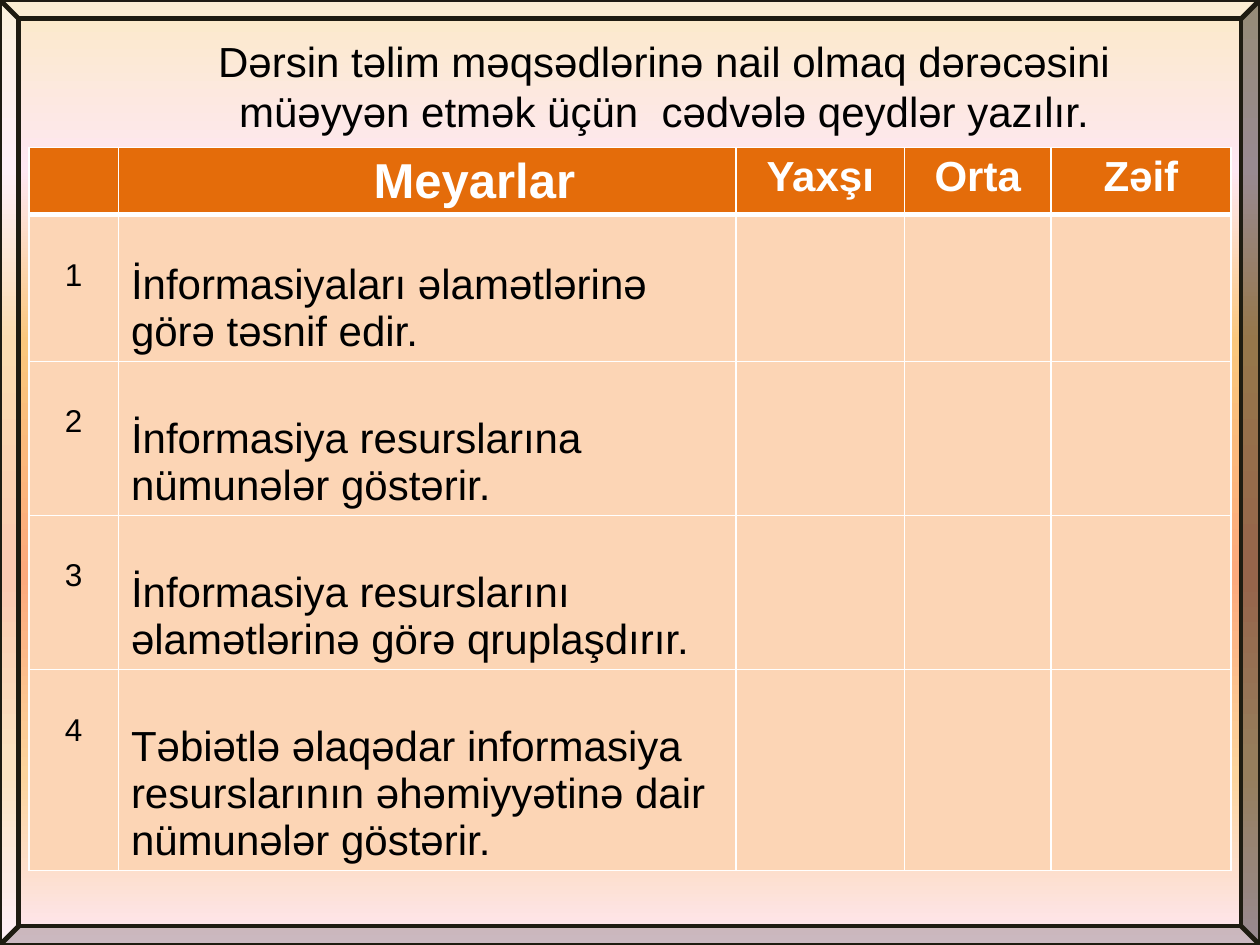
from lxml.etree import SubElement
from pptx import Presentation
from pptx.dml.color import RGBColor
from pptx.enum.shapes import MSO_SHAPE
from pptx.enum.text import PP_ALIGN
from pptx.oxml.ns import qn
from pptx.util import Inches, Pt

BLACK = RGBColor(0x00, 0x00, 0x00)
WHITE = RGBColor(0xFF, 0xFF, 0xFF)
DARK = RGBColor(0x1E, 0x1C, 0x11)
ORANGE = RGBColor(0xE4, 0x6C, 0x0A)
PEACH = RGBColor(0xFC, 0xD5, 0xB5)
CREAM = RGBColor(0xFB, 0xEA, 0xC7)
PINK = RGBColor(0xFE, 0xE7, 0xF2)
AMBER = RGBColor(0xFA, 0xC7, 0x7D)
CORAL = RGBColor(0xFB, 0xA9, 0x7D)
SAND = RGBColor(0xFB, 0xD4, 0x9C)
STOPS = [(0, CREAM), (18, PINK), (36, AMBER), (61, CORAL), (82, SAND), (100, PINK)]

FONT = "Arial"
TITLE = ("Dərsin təlim məqsədlərinə nail olmaq dərəcəsini "
         "müəyyən etmək üçün  cədvələ qeydlər yazılır.")
HEADS = ["", "Meyarlar", "Yaxşı", "Orta", "Zəif"]
GOALS = [
    "İnformasiyaları əlamətlərinə görə təsnif edir.",
    "İnformasiya resurslarına nümunələr göstərir.",
    "İnformasiya resurslarını əlamətlərinə görə qruplaşdırır.",
    "Təbiətlə əlaqədar informasiya resurslarının əhəmiyyətinə dair nümunələr göstərir.",
]
COLS = [0.71, 4.9, 1.34, 1.16, 1.43]
ROWS = [0.53, 1.15, 1.22, 1.21, 1.59]


def shade(fill, root):
    """Fill with the vertical gradient of STOPS."""
    fill.gradient()
    fill.gradient_angle = 270
    stops = next(root.iter(qn("a:gsLst")))
    for old in list(stops):
        stops.remove(old)
    for place, color in STOPS:
        stop = SubElement(stops, qn("a:gs"), pos=str(place * 1000))
        SubElement(stop, qn("a:srgbClr"), val=str(color))


def write(frame, text, size, color=BLACK, bold=False, align=PP_ALIGN.LEFT):
    para = frame.paragraphs[0]
    para.text = text
    para.alignment = align
    font = para.font
    font.name, font.size, font.bold = FONT, Pt(size), bold
    font.color.rgb = color


def edge(cell, base):
    """Draw white cell borders, with the given width below."""
    props = cell._tc.get_or_add_tcPr()
    for spot, (side, width) in enumerate([("L", 1), ("R", 1), ("T", 1), ("B", base)]):
        line = SubElement(props, qn(f"a:ln{side}"), w=str(Pt(width)))
        solid = SubElement(line, qn("a:solidFill"))
        SubElement(solid, qn("a:srgbClr"), val=str(WHITE))
        props.insert(spot, line)


def add_frame(slide):
    bevel = slide.shapes.add_shape(MSO_SHAPE.BEVEL, 0, 0, Inches(10), Inches(7.5))
    bevel.adjustments[0] = 0.02
    bevel.shadow.inherit = False
    shade(bevel.fill, bevel._element)
    bevel.line.color.rgb = DARK
    bevel.line.width = Pt(2.75)


def add_title(slide):
    box = slide.shapes.add_textbox(Inches(1.09), Inches(0.23), Inches(8.36), Inches(0.91))
    box.text_frame.word_wrap = True
    write(box.text_frame, TITLE, 24, align=PP_ALIGN.CENTER)


def add_grid(slide):
    grid = slide.shapes.add_table(
        len(ROWS), len(COLS), Inches(0.23), Inches(1.17),
        Inches(sum(COLS)), Inches(sum(ROWS))).table
    for col, width in zip(grid.columns, COLS):
        col.width = Inches(width)
    for row, height in zip(grid.rows, ROWS):
        row.height = Inches(height)

    # Fills and borders
    for r, row in enumerate(grid.rows):
        for cell in row.cells:
            cell.fill.solid()
            cell.fill.fore_color.rgb = PEACH if r else ORANGE
            edge(cell, 1 if r else 3)

    # Header row
    for c, head in enumerate(HEADS):
        size = 28 if c == 1 else 24
        write(grid.cell(0, c).text_frame, head, size, WHITE, True, PP_ALIGN.CENTER)
    grid.cell(0, 1).margin_left = Inches(0.85)

    # Numbered goals, set lower in their cells
    for r, goal in enumerate(GOALS, 1):
        mark, body = grid.cell(r, 0), grid.cell(r, 1)
        mark.margin_top = Inches(0.34)
        body.margin_top = Inches(0.37 if r == 1 else 0.43)
        write(mark.text_frame, str(r), 18, align=PP_ALIGN.CENTER)
        write(body.text_frame, goal, 24)


def main():
    deck = Presentation()
    deck.slide_width, deck.slide_height = Inches(10), Inches(7.5)
    slide = deck.slides.add_slide(deck.slide_layouts[6])
    shade(slide.background.fill, slide._element)
    add_frame(slide)
    add_grid(slide)
    add_title(slide)
    deck.save("out.pptx")


if __name__ == "__main__":
    main()
